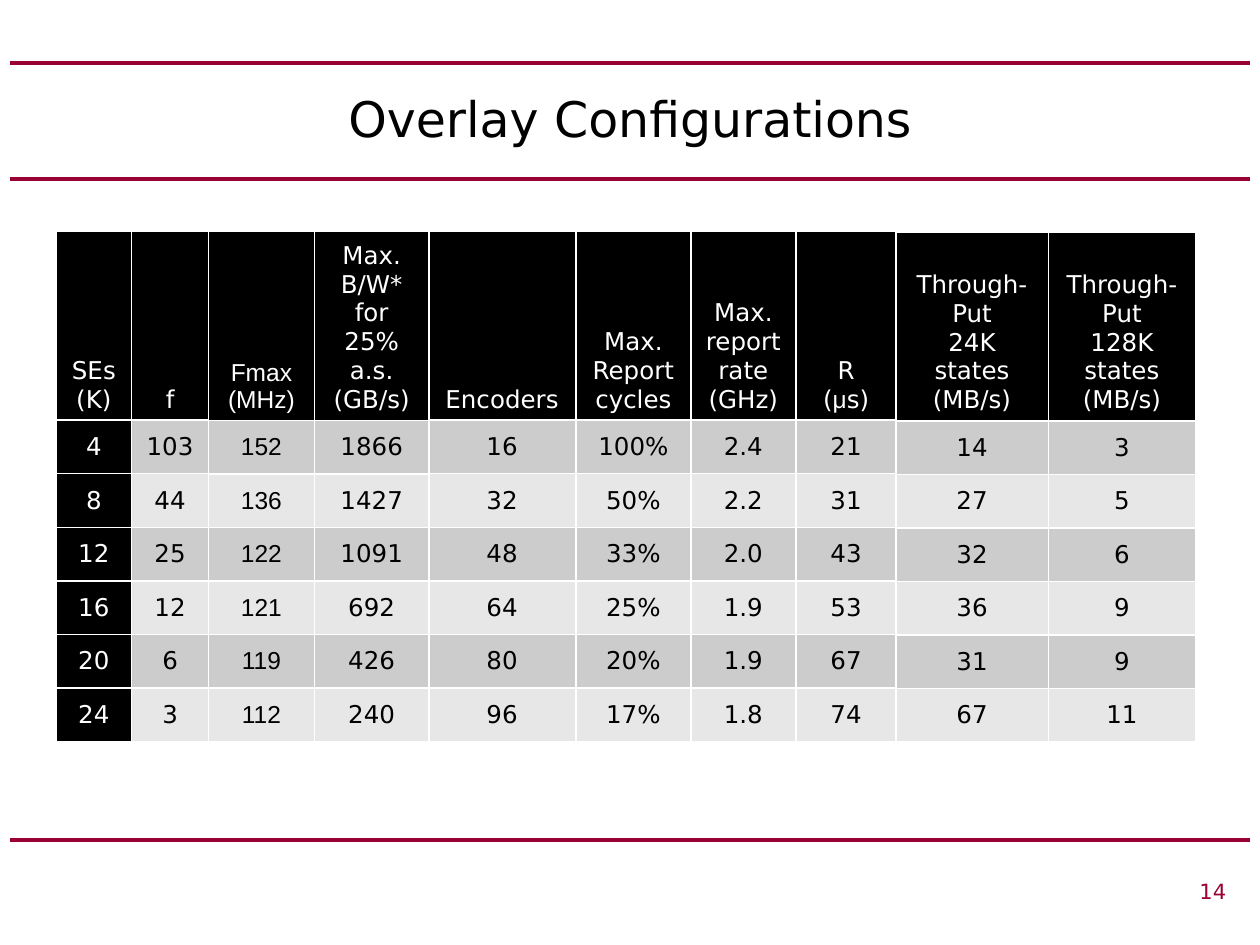
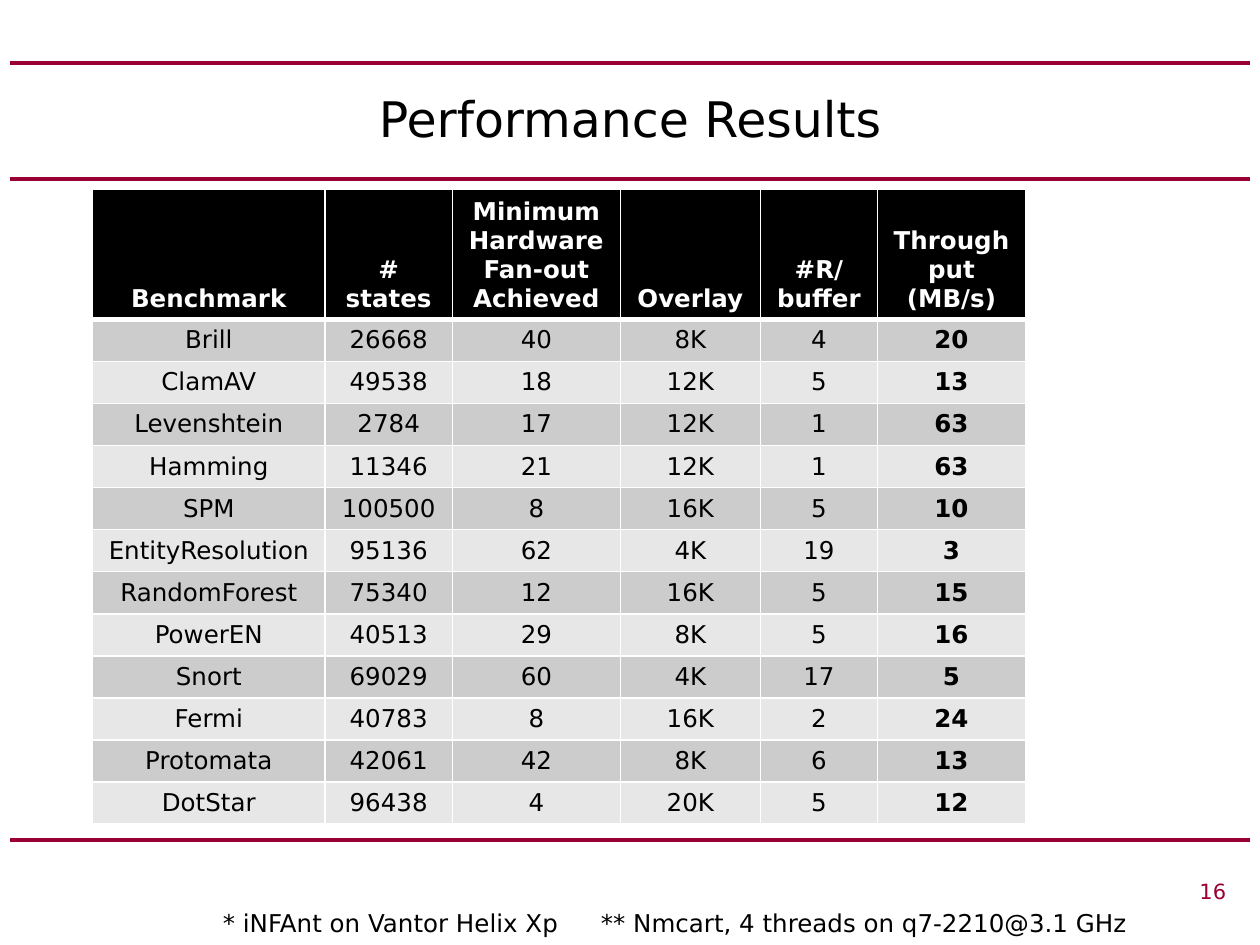
from dataclasses import dataclass

from lxml import etree
from pptx import Presentation
from pptx.dml.color import RGBColor
from pptx.enum.shapes import MSO_CONNECTOR as Connector
from pptx.enum.text import MSO_ANCHOR as Anchor, PP_ALIGN as Align
from pptx.oxml.ns import qn
from pptx.util import Inches, Pt

WIDTH, HEIGHT = Inches(10), Inches(7.5)
COLUMNS, ROWS = 100, 75  # layout grid of the slide


@dataclass(frozen=True)
class Theme:
    accent: str = "990033"
    black: str = "000000"
    white: str = "FFFFFF"
    bands: tuple = ("CCCCCC", "E7E7E7")
    font: str = "DejaVu Sans"
    plain_font: str = "Arial"
    title_size: int = 28
    body_size: int = 14
    number_size: int = 12
    rule_width: float = 2.25
    border_width: float = 1


THEME = Theme()


@dataclass
class Column:
    heading: str
    width: float
    values: str  # separated by spaces
    font: str = THEME.font
    bold: bool = False
    dark: bool = False


def across(columns):
    return round(WIDTH * columns / COLUMNS)


def down(rows):
    return round(HEIGHT * rows / ROWS)


def write(frame, text, size=THEME.body_size, color=THEME.black, font=THEME.font,
          bold=False, align=Align.CENTER):
    """Fill a text frame, one paragraph a line; the Greek mu is set in the plain font."""
    for index, line in enumerate(text.split("\n")):
        paragraph = frame.paragraphs[0] if index == 0 else frame.add_paragraph()
        paragraph.alignment = align
        for span in filter(None, line.partition("μ")):
            run = paragraph.add_run()
            run.text = span
            run.font.name = THEME.plain_font if span == "μ" else font
            run.font.size = Pt(size)
            run.font.bold = bold
            run.font.color.rgb = RGBColor.from_string(color)


def add_text(slide, text, left, top, width, height, anchor=Anchor.TOP, **text_format):
    box = slide.shapes.add_textbox(across(left), down(top), across(width), down(height))
    box.text_frame.word_wrap = True
    box.text_frame.vertical_anchor = anchor
    write(box.text_frame, text, **text_format)


def add_rule(slide, row):
    margin = 0.8
    rule = slide.shapes.add_connector(
        Connector.STRAIGHT, across(margin), down(row), across(COLUMNS - margin), down(row))
    rule.line.color.rgb = RGBColor.from_string(THEME.accent)
    rule.line.width = Pt(THEME.rule_width)
    etree.SubElement(rule._element.spPr, qn("a:effectLst"))


def add_borders(cell, bottom):
    """Draw white borders; they go before the fill in the cell properties."""
    properties = cell._tc.get_or_add_tcPr()
    widths = dict.fromkeys(("lnL", "lnR", "lnT"), THEME.border_width) | {"lnB": bottom}
    for index, (side, width) in enumerate(widths.items()):
        line = etree.Element(qn(f"a:{side}"), w=str(Pt(width)))
        fill = etree.SubElement(line, qn("a:solidFill"))
        etree.SubElement(fill, qn("a:srgbClr"), val=THEME.white)
        properties.insert(index, line)


def fill_cell(cell, text, fill, anchor=Anchor.MIDDLE, bottom=THEME.border_width,
              **text_format):
    cell.fill.solid()
    cell.fill.fore_color.rgb = RGBColor.from_string(fill)
    cell.vertical_anchor = anchor
    add_borders(cell, bottom)
    write(cell.text_frame, text, **text_format)


def add_data_table(slide, columns, left, top, header_height, row_height,
                   header_bold=False, header_border=THEME.border_width):
    row_count = len(columns[0].values.split())
    table = slide.shapes.add_table(
        row_count + 1, len(columns), across(left), down(top),
        across(sum(column.width for column in columns)),
        down(header_height + row_count * row_height)).table
    for row in table.rows:
        row.height = down(row_height)
    table.rows[0].height = down(header_height)
    for index, column in enumerate(columns):
        table.columns[index].width = across(column.width)
        fill_cell(table.cell(0, index), column.heading, THEME.black, Anchor.BOTTOM,
                  header_border, color=THEME.white, font=column.font, bold=header_bold)
        for row, value in enumerate(column.values.split()):
            fill = THEME.black if column.dark else THEME.bands[row % 2]
            color = THEME.white if column.dark else THEME.black
            fill_cell(table.cell(row + 1, index), value, fill,
                      color=color, font=column.font, bold=column.bold)


def add_slide(presentation, title, number):
    """Add a blank slide with the shared rules, title and page number."""
    slide = presentation.slides.add_slide(presentation.slide_layouts[6])
    for row in (66.7, 14.2, 5):
        add_rule(slide, row)
    add_text(slide, title, 5, 5, 90, 8.7, Anchor.MIDDLE, size=THEME.title_size)
    add_text(slide, str(number), 57.5, 69.2, 40.8, 3.3, size=THEME.number_size,
             color=THEME.accent, align=Align.RIGHT)
    return slide


def add_overlay_configurations(presentation):
    slide = add_slide(presentation, "Overlay Configurations", 14)
    size_columns = [
        Column("SEs (K)", 6, "4 8 12 16 20 24", dark=True),
        Column("f", 6.1, "103 44 25 12 6 3"),
    ]
    speed_columns = [
        Column("Fmax\n(MHz)", 8.4, "152 136 122 121 119 112", font=THEME.plain_font),
        Column("Max.\nB/W* for 25% a.s. (GB/s)", 9.1, "1866 1427 1091 692 426 240"),
    ]
    report_columns = [
        Column("Encoders", 11.7, "16 32 48 64 80 96"),
        Column("Max.\nReport\ncycles", 9.15, "100% 50% 33% 25% 20% 17%"),
        Column("Max. report rate (GHz)", 8.3, "2.4 2.2 2.0 1.9 1.9 1.8"),
    ]
    reload_columns = [Column("R\n(μs)", 7.9, "21 31 43 53 67 74")]
    throughput_columns = [
        Column("Through-\nPut\n24K states\n(MB/s)", 12.1, "14 27 32 36 31 67"),
        Column("Through-\nPut\n128K states\n(MB/s)", 11.7, "3 5 6 9 9 11"),
    ]
    row_height = 4.25
    for columns, left, top, header_height in (
            (size_columns, 4.45, 18.35, 15),
            (reload_columns, 63.2, 18.35, 15),
            (report_columns, 34, 18.35, 15),
            (speed_columns, 16.55, 18.35, 14.7),
            (throughput_columns, 71.1, 18.4, 15)):
        add_data_table(slide, columns, left, top, header_height, row_height)


def add_performance_results(presentation):
    slide = add_slide(presentation, "Performance Results", 16)
    columns = [
        Column("Benchmark", 18.45,
               "Brill ClamAV Levenshtein Hamming SPM EntityResolution "
               "RandomForest PowerEN Snort Fermi Protomata DotStar"),
        Column("#\nstates", 10.1,
               "26668 49538 2784 11346 100500 95136 75340 40513 69029 40783 42061 96438"),
        Column("Minimum\nHardware\nFan-out\nAchieved", 13.35,
               "40 18 17 21 8 62 12 29 60 8 42 4"),
        Column("Overlay", 11.1, "8K 12K 12K 12K 16K 4K 16K 8K 4K 16K 8K 20K"),
        Column("#R/\nbuffer", 9.3, "4 5 1 1 5 19 5 5 17 2 6 5"),
        Column("Through\nput\n(MB/s)", 11.75, "20 13 63 63 10 3 15 16 5 24 13 12",
               bold=True),
    ]
    add_data_table(slide, columns, 7.35, 15, header_height=10, row_height=3.29,
                   header_bold=True, header_border=3)
    add_text(slide, "* iNFAnt on Vantor Helix Xp\t** Nmcart, 4 threads on q7-2210@3.1 GHz",
             16.7, 71.6, 77.1, 3.4, align=Align.LEFT)


def main():
    presentation = Presentation()
    presentation.slide_width, presentation.slide_height = WIDTH, HEIGHT
    add_overlay_configurations(presentation)
    add_performance_results(presentation)
    presentation.save("out.pptx")


if __name__ == "__main__":
    main()
